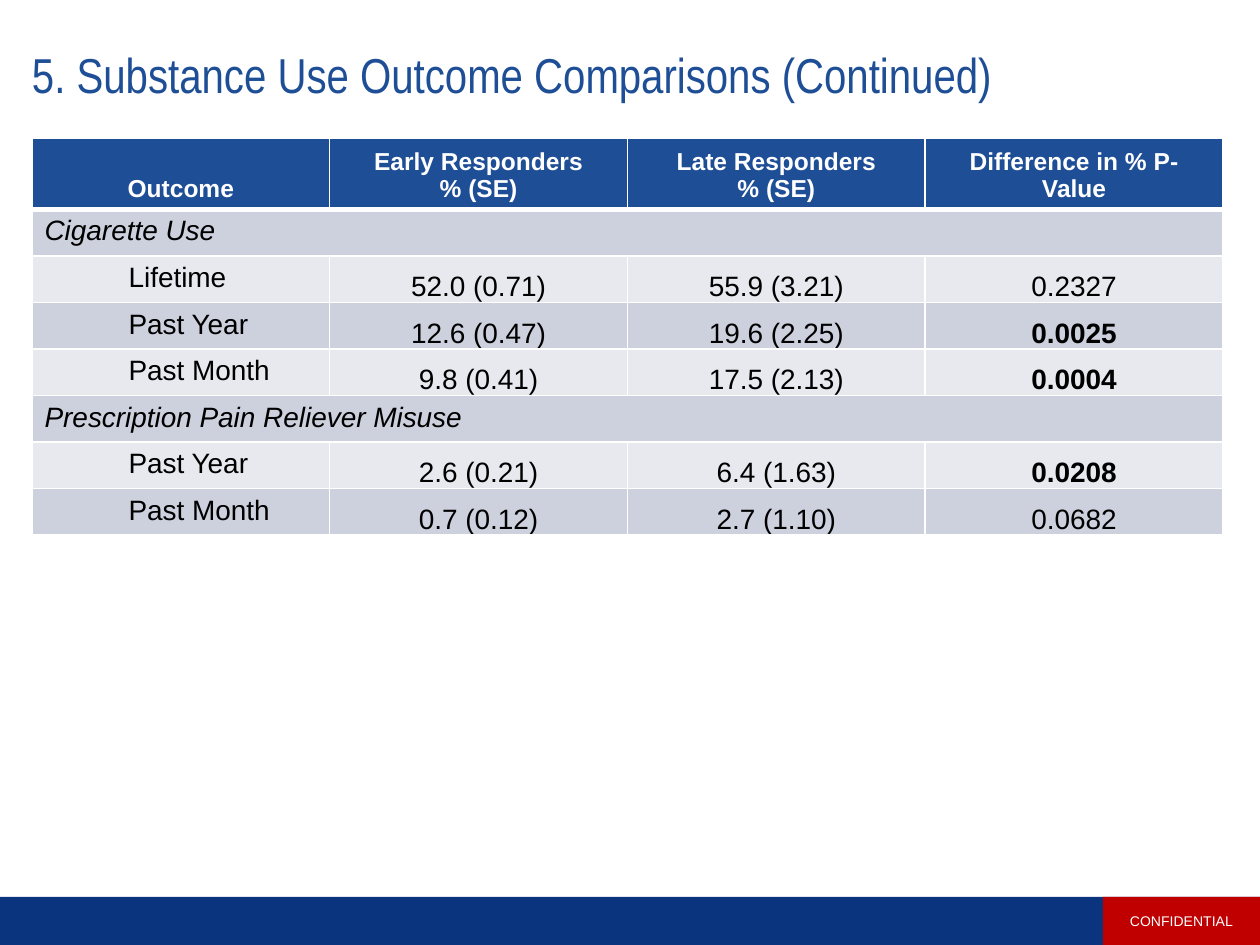
from lxml.etree import SubElement
from pptx import Presentation
from pptx.dml.color import RGBColor
from pptx.enum.shapes import MSO_SHAPE as Shape
from pptx.enum.text import MSO_ANCHOR as Anchor, PP_ALIGN as Align
from pptx.oxml.ns import qn
from pptx.util import Pt

TITLE = "5. Substance Use Outcome Comparisons (Continued)"
HEAD = ["Outcome", "Early Responders\n% (SE)", "Late Responders\n% (SE)",
        "Difference in % P-Value"]
GROUPS = [
    ("Cigarette Use", [
        ("Lifetime", "52.0 (0.71)", "55.9 (3.21)", "0.2327"),
        ("Past Year", "12.6 (0.47)", "19.6 (2.25)", "0.0025"),
        ("Past Month", "9.8 (0.41)", "17.5 (2.13)", "0.0004"),
    ]),
    ("Prescription Pain Reliever Misuse", [
        ("Past Year", "2.6 (0.21)", "6.4 (1.63)", "0.0208"),
        ("Past Month", "0.7 (0.12)", "2.7 (1.10)", "0.0682"),
    ]),
]
COLORS = {"title": "1E4E96", "bar": "0A357E", "tag": "C00000", "white": "FFFFFF",
          "black": "000000", "dark": "CDD0DD", "light": "E8E9EF"}
WIDE, HIGH = 1260, 945
LEFT, TOP, WIDTH, BOTTOM = 32, 138, 1191, 535
HEAD_H, BAR_H, TAG_W = 71, 48, 157
INDENT = 84


def px(n):
    return round(n * 914400 / 126)


def rgb(name):
    return RGBColor.from_string(COLORS[name])


def write(frame, text, size, color, align=Align.LEFT, face="Arial", bold=False, italic=False):
    frame.text = text
    for par in frame.paragraphs:
        par.alignment = align
        font = par.font
        font.name, font.size, font.bold, font.italic = face, Pt(size), bold, italic
        font.color.rgb = rgb(color)


def paint(cell, color, under=1):
    """Give a cell white borders and a fill; under is the bottom border in points."""
    props = cell._tc.get_or_add_tcPr()
    for side, width in (("L", 1), ("R", 1), ("T", 1), ("B", under)):
        line = SubElement(props, qn("a:ln" + side), w=str(Pt(width)))
        fill = SubElement(line, qn("a:solidFill"))
        SubElement(fill, qn("a:srgbClr"), val=COLORS["white"])
    cell.fill.solid()
    cell.fill.fore_color.rgb = rgb(color)


def add_bar(slide, left, color):
    bar = slide.shapes.add_shape(Shape.RECTANGLE, px(left), px(HIGH - BAR_H),
                                 px(WIDE - left), px(BAR_H))
    bar.shadow.inherit = False
    bar.fill.solid()
    bar.fill.fore_color.rgb = rgb(color)
    bar.line.fill.background()
    return bar


def add_title(slide):
    frame = slide.shapes.add_textbox(px(19), px(25), px(1218), px(105)).text_frame
    frame.word_wrap = True
    frame.vertical_anchor = Anchor.MIDDLE
    frame.margin_left = frame.margin_top = frame.margin_bottom = px(13)
    frame.margin_right = px(25)
    write(frame, TITLE, 28, "title", face="Arial Narrow")
    frame.paragraphs[0].line_spacing = 0.9


def fill_row(table, r, row):
    for c, text in enumerate(row):
        cell = table.cell(r, c)
        paint(cell, "dark" if r % 2 else "light")
        if c == 0:
            write(cell.text_frame, text, 16, "black")
            cell.text_frame.paragraphs[0]._p.get_or_add_pPr().set("marL", str(px(INDENT)))
            continue
        cell.vertical_anchor = Anchor.BOTTOM
        cell.margin_left = cell.margin_right = cell.margin_top = px(1)
        cell.margin_bottom = 0
        significant = c == 3 and float(text) < 0.05
        write(cell.text_frame, text, 16, "black", Align.CENTER, bold=significant)


def add_results(slide):
    count = sum(1 + len(rows) for _, rows in GROUPS)
    cols = len(HEAD)
    table = slide.shapes.add_table(count + 1, cols, px(LEFT), px(TOP),
                                   px(WIDTH), px(BOTTOM - TOP)).table
    for col in table.columns:
        col.width = px(WIDTH / cols)
    for r, row in enumerate(table.rows):
        row.height = px((BOTTOM - TOP - HEAD_H) / count if r else HEAD_H)

    for c, text in enumerate(HEAD):
        cell = table.cell(0, c)
        paint(cell, "title", under=3)
        cell.vertical_anchor = Anchor.BOTTOM
        write(cell.text_frame, text, 14, "white", Align.CENTER, bold=True)

    r = 1
    for group, rows in GROUPS:
        for c in range(cols):
            paint(table.cell(r, c), "dark", under=1)
        table.cell(r, 0).merge(table.cell(r, cols - 1))
        write(table.cell(r, 0).text_frame, group, 16, "black", italic=True)
        for r, row in enumerate(rows, r + 1):
            fill_row(table, r, row)
        r += 1


def main():
    deck = Presentation()
    deck.slide_width, deck.slide_height = px(WIDE), px(HIGH)
    slide = deck.slides.add_slide(deck.slide_layouts[6])
    add_bar(slide, 0, "bar")
    tag = add_bar(slide, WIDE - TAG_W, "tag").text_frame
    tag.vertical_anchor = Anchor.MIDDLE
    write(tag, "CONFIDENTIAL", 8, "white", Align.CENTER)
    add_title(slide)
    add_results(slide)
    deck.save("out.pptx")


if __name__ == "__main__":
    main()
